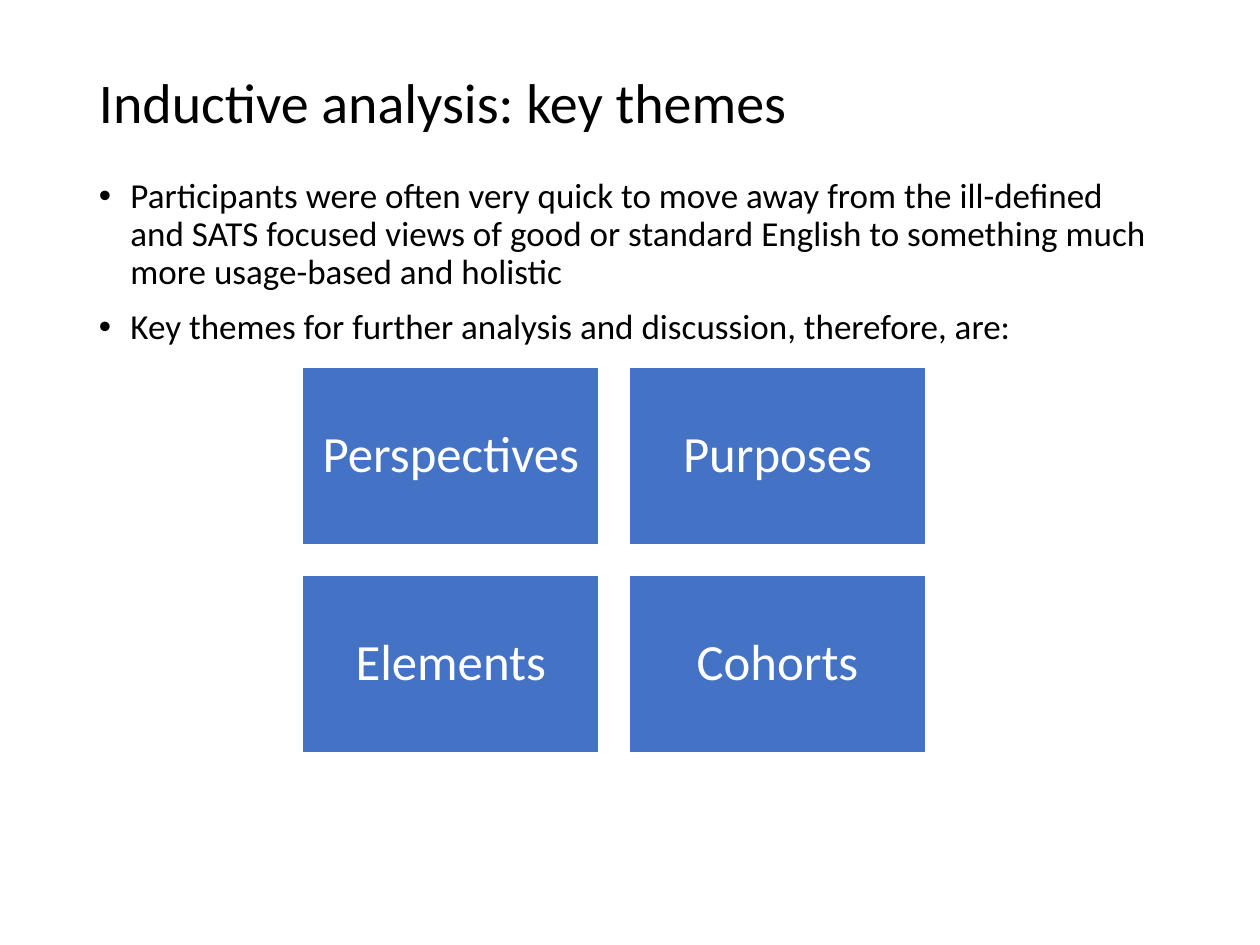
from lxml import etree
from pptx import Presentation
from pptx.dml.color import RGBColor
from pptx.enum.shapes import MSO_SHAPE
from pptx.enum.text import MSO_ANCHOR, PP_ALIGN
from pptx.oxml.ns import qn
from pptx.util import Pt

RECTANGLE = MSO_SHAPE.RECTANGLE
TOP, MIDDLE = MSO_ANCHOR.TOP, MSO_ANCHOR.MIDDLE
CENTER = PP_ALIGN.CENTER

FONT = "Calibri"
BLACK, WHITE, BLUE = "000000", "FFFFFF", "4472C4"
MARGIN, CONTENT_WIDTH = 49.5, 621

TITLE = "Inductive analysis: key themes"
FINDINGS = [
    "Participants were often very quick to move away from the ill-defined and SATS "
    "focused views of good or standard English to something much more usage-based "
    "and holistic",
    "Key themes for further analysis and discussion, therefore, are:",
]
THEMES = ["Perspectives", "Purposes", "Elements", "Cohorts"]
THEME_COLUMNS = 2
THEME_LEFT, THEME_TOP = 172.8, 209.6
THEME_WIDTH, THEME_HEIGHT = 169.7, 101.8
THEME_GAP = 17


def color(hex_string):
    return RGBColor.from_string(hex_string)


def style_paragraph(paragraph, size, hex_string):
    paragraph.line_spacing = 0.9
    paragraph.font.name = FONT
    paragraph.font.size = Pt(size)
    paragraph.font.color.rgb = color(hex_string)


def add_bullet(paragraph, indent):
    properties = paragraph._p.get_or_add_pPr()
    properties.set("marL", str(Pt(indent)))
    properties.set("indent", str(-Pt(indent)))
    etree.SubElement(properties, qn("a:buFont")).set("typeface", "Arial")
    etree.SubElement(properties, qn("a:buChar")).set("char", "•")


def add_text(slide, top, height, lines, size, anchor, bulleted=False):
    box = slide.shapes.add_textbox(Pt(MARGIN), Pt(top), Pt(CONTENT_WIDTH), Pt(height))
    frame = box.text_frame
    frame.word_wrap = True
    frame.vertical_anchor = anchor
    frame.text = "\n".join(lines)
    for index, paragraph in enumerate(frame.paragraphs):
        if bulleted:
            add_bullet(paragraph, 18)
        if index:
            paragraph.space_before = Pt(10)
        style_paragraph(paragraph, size, BLACK)


def add_theme(slide, left, top, theme):
    block = slide.shapes.add_shape(
        RECTANGLE, Pt(left), Pt(top), Pt(THEME_WIDTH), Pt(THEME_HEIGHT))
    block.shadow.inherit = False
    block.fill.solid()
    block.fill.fore_color.rgb = color(BLUE)
    block.line.color.rgb = color(WHITE)
    block.line.width = Pt(1)
    frame = block.text_frame
    frame.word_wrap = True
    frame.vertical_anchor = MIDDLE
    frame.margin_left = frame.margin_right = Pt(8.6)
    frame.margin_top = frame.margin_bottom = Pt(8.6)
    frame.text = theme
    label = frame.paragraphs[0]
    label.alignment = CENTER
    style_paragraph(label, 29, WHITE)


def main():
    presentation = Presentation()
    presentation.slide_width, presentation.slide_height = Pt(720), Pt(540)
    slide = presentation.slides.add_slide(presentation.slide_layouts[6])
    add_text(slide, 28.8, 62.6, [TITLE], 32, MIDDLE)
    add_text(slide, 98.6, 349.2, FINDINGS, 20, TOP, bulleted=True)
    for index, theme in enumerate(THEMES):
        row, column = divmod(index, THEME_COLUMNS)
        left = THEME_LEFT + column * (THEME_WIDTH + THEME_GAP)
        top = THEME_TOP + row * (THEME_HEIGHT + THEME_GAP)
        add_theme(slide, left, top, theme)
    presentation.save("out.pptx")


if __name__ == "__main__":
    main()
